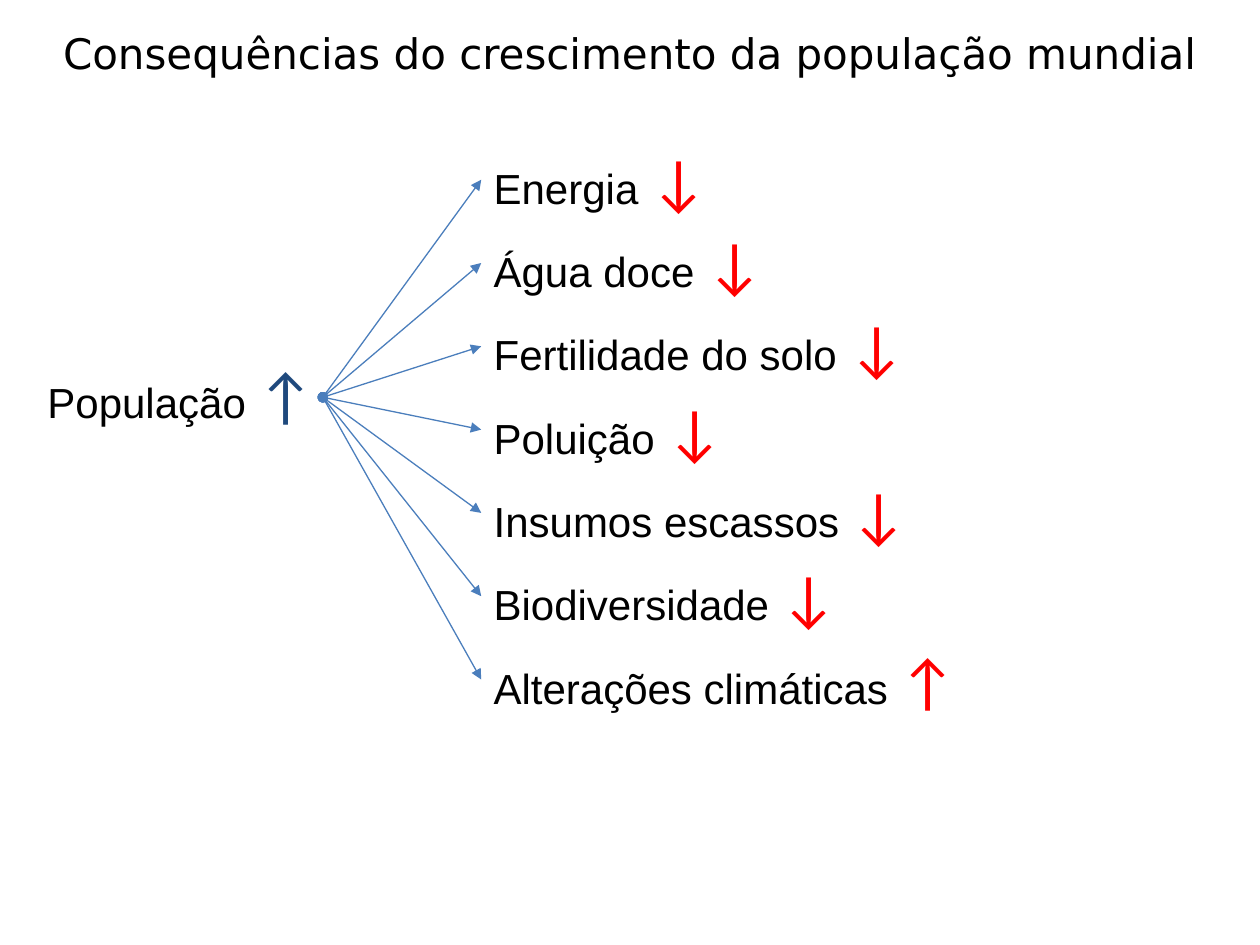
"""Build a slide linking population growth to its seven consequences."""
from dataclasses import dataclass

from lxml.etree import SubElement
from pptx import Presentation
from pptx.dml.color import RGBColor as Color
from pptx.enum.shapes import MSO_CONNECTOR as Connector
from pptx.enum.text import MSO_AUTO_SIZE as AutoSize, PP_ALIGN as Align
from pptx.oxml.ns import qn
from pptx.util import Pt


@dataclass(frozen=True)
class Theme:
    black: Color = Color(0x00, 0x00, 0x00)
    red: Color = Color(0xFF, 0x00, 0x00)
    navy: Color = Color(0x1F, 0x49, 0x7D)
    blue: Color = Color(0x4B, 0x7E, 0xBC)
    text_size: Pt = Pt(24)
    arrow_size: Pt = Pt(36)
    line_width: Pt = Pt(0.75)
    title_font: str = "DejaVu Sans"
    label_font: str = "Arial"
    arrow_font: str = "Calibri"


THEME = Theme()
BOX_HEIGHT = 51
EFFECT_LEFT, EFFECT_TOP, EFFECT_PITCH = 275, 77.2, 47.6
HUB = Pt(184.5), Pt(227)
EFFECTS = [
    ("Energia", "↓", 142),
    ("Água doce", "↓", 209),
    ("Fertilidade do solo", "↓", 270),
    ("Poluição", "↓", 270),
    ("Insumos escassos", "↓", 270),
    ("Biodiversidade", "↓", 270),
    ("Alterações climáticas", "↑", 289.5),
]


def style_font(font, name, size, color):
    font.name = name
    font.size = size
    font.color.rgb = color


def add_box(page, left, top, width):
    box = page.shapes.add_textbox(Pt(left), Pt(top), Pt(width), Pt(BOX_HEIGHT))
    box.text_frame.word_wrap = True
    box.text_frame.auto_size = AutoSize.SHAPE_TO_FIT_TEXT
    return box


def add_title(page, text):
    para = add_box(page, 0, -2, 720).text_frame.paragraphs[0]
    para.text = text
    para.alignment = Align.CENTER
    para.line_spacing = 1.5
    style_font(para.font, THEME.title_font, THEME.text_size, THEME.black)


def add_trend(page, left, top, width, label, arrow, arrow_color):
    box = add_box(page, left, top, width)
    para = box.text_frame.paragraphs[0]
    for text, *style in (
        (f"{label} ", THEME.label_font, THEME.text_size, THEME.black),
        (arrow, THEME.arrow_font, THEME.arrow_size, arrow_color),
    ):
        span = para.add_run()
        span.text = text
        style_font(span.font, *style)
    return box


def add_ray(page, target):
    ray = page.shapes.add_connector(Connector.STRAIGHT, *HUB, *HUB)
    ray.end_connect(target, 1)
    ray.line.color.rgb = THEME.blue
    ray.line.width = THEME.line_width
    properties = ray.line._get_or_add_ln()
    SubElement(properties, qn("a:headEnd"), type="oval")
    SubElement(properties, qn("a:tailEnd"), type="triangle")
    SubElement(ray._element.spPr, qn("a:effectLst"))


def main():
    deck = Presentation()
    deck.slide_width, deck.slide_height = Pt(720), Pt(540)
    page = deck.slides.add_slide(deck.slide_layouts[6])
    add_title(page, "Consequências do crescimento da população mundial")
    add_trend(page, 20, 199.5, 209.5, "População", "↑", THEME.navy)
    targets = [
        add_trend(page, EFFECT_LEFT, EFFECT_TOP + row * EFFECT_PITCH, width, label, arrow, THEME.red)
        for row, (label, arrow, width) in enumerate(EFFECTS)
    ]
    for target in targets:
        add_ray(page, target)
    deck.save("out.pptx")


if __name__ == "__main__":
    main()
